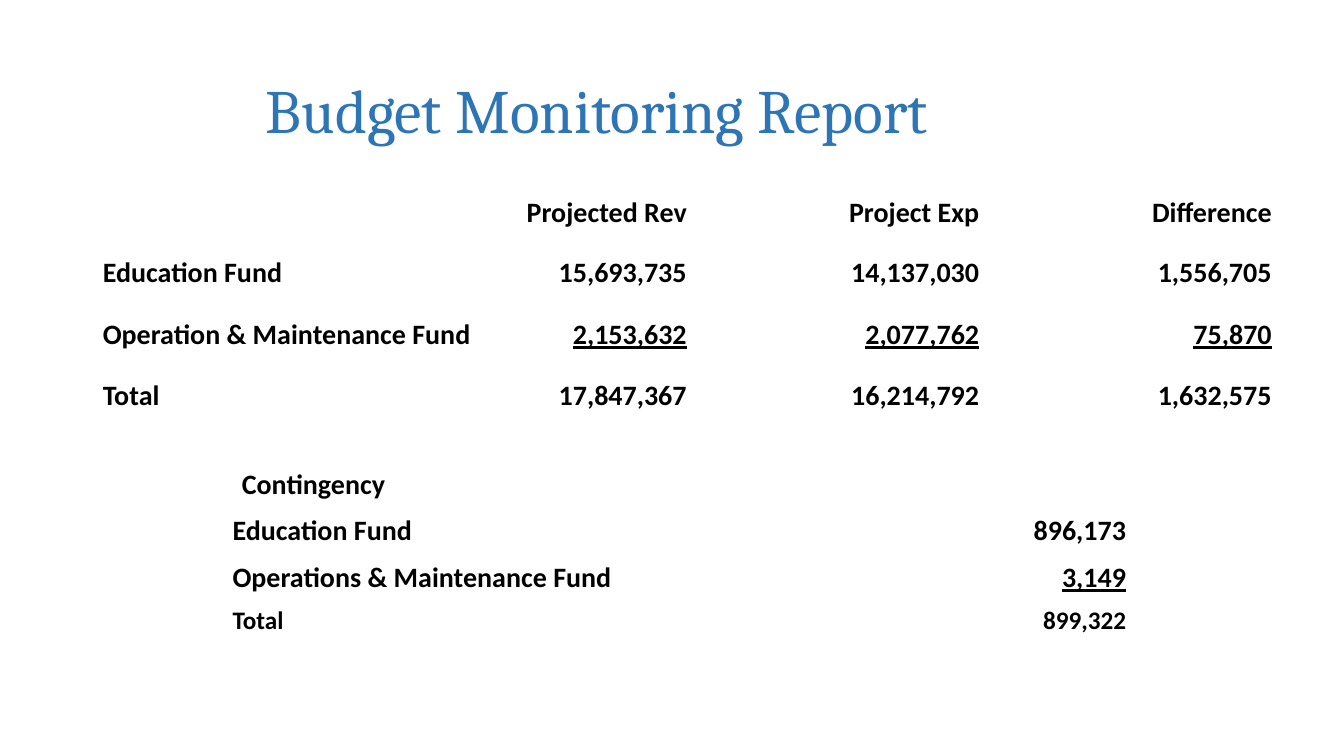
"""Build the budget monitoring slide with its fund and contingency tables."""
from pptx import Presentation
from pptx import util as u
from pptx.dml.color import RGBColor
from pptx.enum import text

BLUE = RGBColor(0x2E, 0x75, 0xB6)
BLACK = RGBColor(0, 0, 0)
TIGHT = {"margin_left": u.Cm(0.02), "margin_right": u.Cm(0.02),
         "margin_top": u.Cm(0.02), "margin_bottom": 0,
         "vertical_anchor": text.MSO_ANCHOR.BOTTOM}


def style_font(font, color, **values):
    font.color.rgb = color
    for name, value in values.items():
        setattr(font, name, value)


deck = Presentation()
deck.slide_width, deck.slide_height = u.Cm(33.87), u.Cm(19.05)
page = deck.slides.add_slide(deck.slide_layouts[6])

title = page.shapes.add_textbox(u.Cm(6.45), u.Cm(1.02), u.Cm(25.1), u.Cm(3.68))
title.text_frame.word_wrap = True
title.text_frame.vertical_anchor = text.MSO_ANCHOR.MIDDLE
para = title.text_frame.paragraphs[0]
para.line_spacing = 0.9
span = para.add_run()
span.text = "Budget Monitoring Report"
style_font(span.font, BLUE, name="Cambria", size=u.Pt(44))

funds = {
    "left": 2.57, "top": 4.27,
    "widths": [9.65, 5.11, 7.37, 7.37], "heights": [1.52, 1.52, 1.57, 1.52],
    "total_size": 20, "tight_from": 0,
    "rows": [
        ["", "Projected Rev", "Project Exp", "Difference"],
        ["Education Fund", "15,693,735", "14,137,030", "1,556,705"],
        ["Operation & Maintenance Fund", "2,153,632", "2,077,762", "75,870"],
        ["Total", "17,847,367", "16,214,792", "1,632,575"],
    ],
}
contingency = {
    "left": 5.84, "top": 11.66,
    "widths": [11.28, 11.28], "heights": [1.02, 1.04, 1.19, 1.04],
    "total_size": 18, "tight_from": 1,
    "rows": [
        ["Contingency", ""],
        ["Education Fund", "896,173"],
        ["Operations & Maintenance Fund", "3,149"],
        ["Total", "899,322"],
    ],
}

for block in (funds, contingency):
    rows, widths, heights = block["rows"], block["widths"], block["heights"]
    table = page.shapes.add_table(
        len(rows), len(widths), u.Cm(block["left"]), u.Cm(block["top"]),
        u.Cm(sum(widths)), u.Cm(sum(heights))).table
    table.horz_banding = False
    for column, width in zip(table.columns, widths):
        column.width = u.Cm(width)
    for r, (row, height) in enumerate(zip(rows, heights)):
        table.rows[r].height = u.Cm(height)
        is_total = r == len(rows) - 1
        for c, words in enumerate(row):
            cell = table.cell(r, c)
            cell.fill.background()
            if r >= block["tight_from"]:
                for name, value in TIGHT.items():
                    setattr(cell, name, value)
            if not words:
                continue
            para = cell.text_frame.paragraphs[0]
            para.alignment = text.PP_ALIGN.RIGHT if c else text.PP_ALIGN.LEFT
            span = para.add_run()
            span.text = words
            style_font(span.font, BLACK, name="Calibri", bold=True,
                       size=u.Pt(block["total_size"] if is_total else 20),
                       underline=r == len(rows) - 2 and c > 0)

deck.save("out.pptx")
